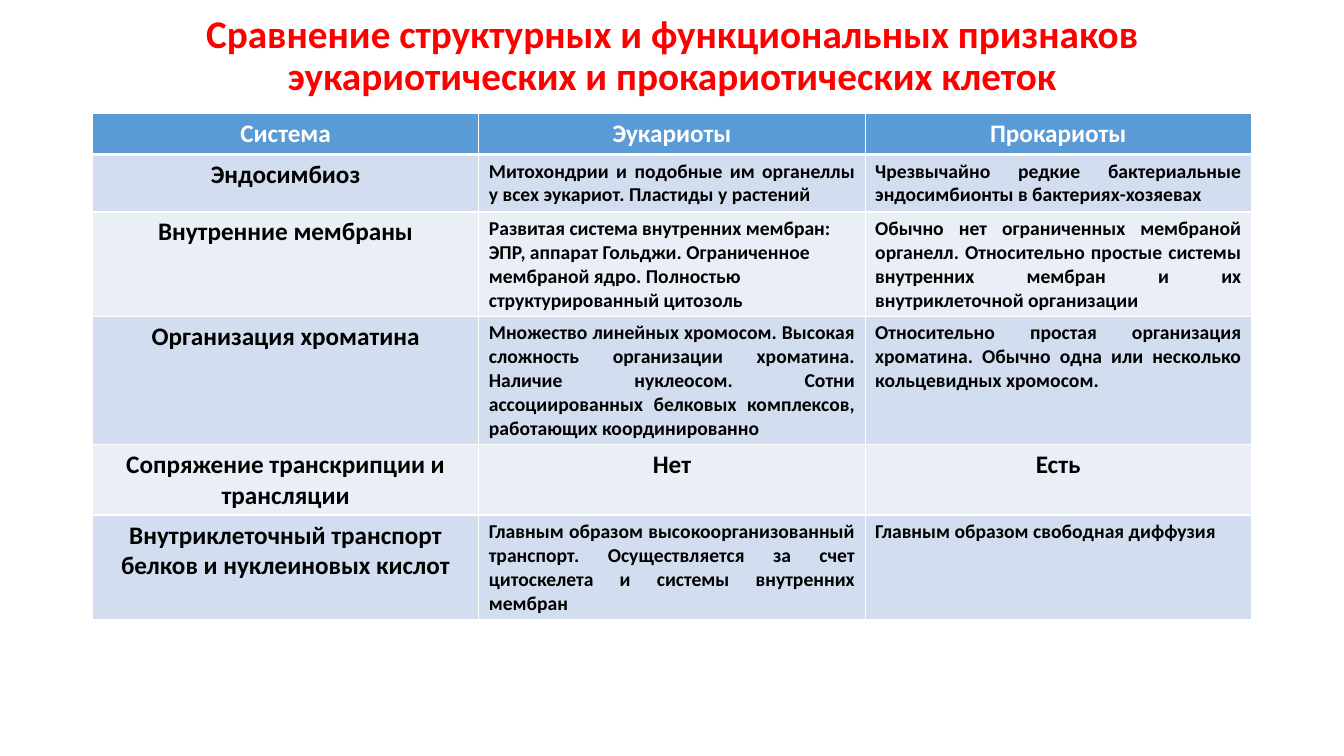
import pptx
import pptx.util
import pptx.dml.color
import pptx.enum.text
import pptx.oxml
import pptx.oxml.ns

Cm, Pt = pptx.util.Cm, pptx.util.Pt
ALIGN = pptx.enum.text.PP_ALIGN

HEADING = "Сравнение структурных и функциональных признаков\vэукариотических и прокариотических клеток"
SYSTEMS = [
    [("Система", "header"), ("Эукариоты", "header"), ("Прокариоты", "header")],
    [
        ("Эндосимбиоз", "label"),
        ("Митохондрии и подобные им органеллы у всех эукариот. Пластиды у растений", "detail"),
        ("Чрезвычайно редкие бактериальные эндосимбионты в бактериях-хозяевах", "detail"),
    ],
    [
        ("Внутренние мембраны", "label"),
        ("Развитая система внутренних мембран: ЭПР, аппарат Гольджи. Ограниченное мембраной ядро. "
         "Полностью структурированный цитозоль", "ragged"),
        ("Обычно нет ограниченных мембраной органелл. Относительно простые системы внутренних мембран "
         "и их внутриклеточной организации", "detail"),
    ],
    [
        ("Организация хроматина", "label"),
        ("Множество линейных хромосом. Высокая сложность организации хроматина. Наличие нуклеосом. "
         "Сотни ассоциированных белковых комплексов, работающих координированно", "detail"),
        ("Относительно простая организация хроматина. Обычно одна или несколько кольцевидных хромосом.",
         "detail"),
    ],
    [("Сопряжение транскрипции и трансляции", "label"), ("Нет", "label"), ("Есть", "label")],
    [
        ("Внутриклеточный транспорт белков и нуклеиновых кислот", "label"),
        ("Главным образом высокоорганизованный транспорт. Осуществляется за счет цитоскелета "
         "и системы внутренних мембран", "detail"),
        ("Главным образом свободная диффузия", "detail"),
    ],
]
ROW_HEIGHTS = [1.03, 1.45, 2.62, 3.23, 1.78, 2.62]
COLORS = {
    "heading": "FF0000", "header": "FFFFFF", "body": "000000", "border": "FFFFFF",
    "header_fill": "5B9BD5", "odd_fill": "D2DEEF", "even_fill": "EAEFF7",
}
FORMATS = {
    "heading": (28, "heading", ALIGN.CENTER),
    "header": (18, "header", ALIGN.CENTER),
    "label": (18, "body", ALIGN.CENTER),
    "detail": (14, "body", ALIGN.JUSTIFY),
    "ragged": (14, "body", ALIGN.LEFT),
}
LEFT, WIDTH, HEADING_HEIGHT = 2.33, 29.21, 2.86


def rgb(color):
    return pptx.dml.color.RGBColor.from_string(COLORS[color])


def write(frame, text, style):
    size, color, alignment = FORMATS[style]
    frame.text = text
    paragraph = frame.paragraphs[0]
    paragraph.alignment = alignment
    for run in paragraph.runs:
        for attribute, value in {"name": "Calibri", "size": Pt(size), "bold": True}.items():
            setattr(run.font, attribute, value)
        run.font.color.rgb = rgb(color)
    return paragraph


def add_borders(cell, row):
    widths = {"L": 1, "R": 1, "T": 3 if row == 1 else 1, "B": 3 if row == 0 else 1}
    properties = cell._tc.get_or_add_tcPr()
    for position, (side, width) in enumerate(widths.items()):
        properties.insert(position, pptx.oxml.parse_xml(
            f'<a:ln{side} {pptx.oxml.ns.nsdecls("a")} w="{Pt(width)}"><a:solidFill>'
            f'<a:srgbClr val="{COLORS["border"]}"/></a:solidFill></a:ln{side}>'))


def main():
    deck = pptx.Presentation()
    deck.slide_width, deck.slide_height = Cm(33.87), Cm(19.05)
    slide = deck.slides.add_slide(deck.slide_layouts[6])

    heading = slide.shapes.add_textbox(Cm(LEFT), Cm(0), Cm(WIDTH), Cm(HEADING_HEIGHT)).text_frame
    heading.word_wrap = True
    heading.vertical_anchor = pptx.enum.text.MSO_ANCHOR.MIDDLE
    write(heading, HEADING, "heading").line_spacing = 0.9

    comparison = slide.shapes.add_table(
        len(SYSTEMS), len(SYSTEMS[0]), Cm(LEFT), Cm(HEADING_HEIGHT), Cm(WIDTH), Cm(sum(ROW_HEIGHTS))).table
    for row, (features, height) in enumerate(zip(SYSTEMS, ROW_HEIGHTS)):
        comparison.rows[row].height = Cm(height)
        fill = "header_fill" if row == 0 else "odd_fill" if row % 2 else "even_fill"
        for column, (text, style) in enumerate(features):
            cell = comparison.cell(row, column)
            write(cell.text_frame, text, style)
            cell.fill.solid()
            cell.fill.fore_color.rgb = rgb(fill)
            add_borders(cell, row)

    deck.save("out.pptx")


if __name__ == "__main__":
    main()
